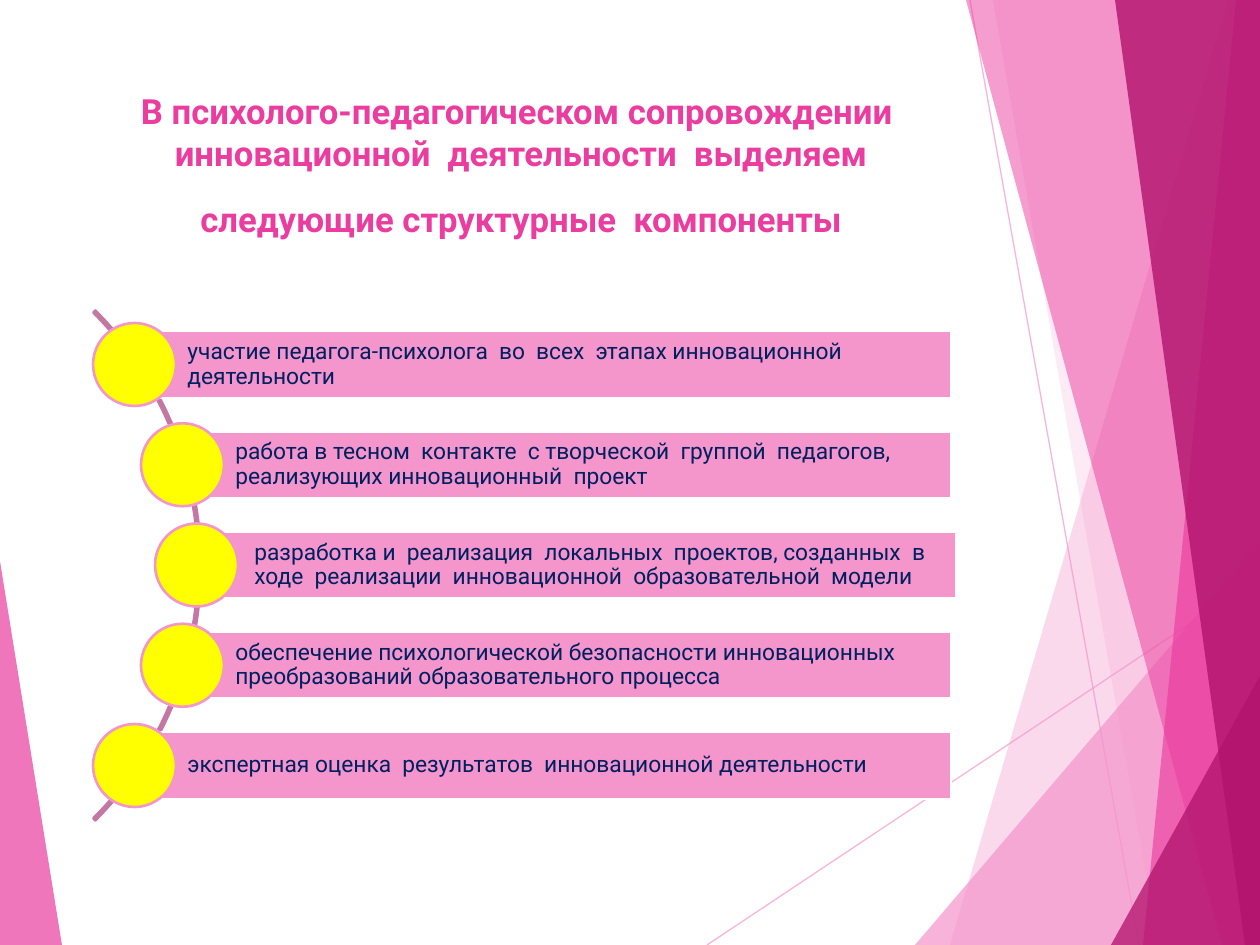
"""Build the slide on the components of psychological and pedagogical support."""
from lxml import etree
from pptx import Presentation, util as u
from pptx.dml.color import RGBColor
from pptx.enum import shapes, text
from pptx.oxml.ns import qn

SCALE = 914400 / 126
WIDTH, HEIGHT = 1260, 945
PINK, HOT = RGBColor(0xF4, 0x96, 0xCB), RGBColor(0xEB, 0x3D, 0x9F)
CRIMSON, MAUVE = RGBColor(0xB2, 0x13, 0x6D), RGBColor(0xC3, 0x78, 0xA3)
NAVY, YELLOW = RGBColor(0x00, 0x20, 0x60), RGBColor(0xFF, 0xFF, 0x00)
WHITE = RGBColor(0xFF, 0xFF, 0xFF)

TITLE = ["В психолого-педагогическом сопровождении  инновационной  деятельности  выделяем",
         "следующие структурные  компоненты"]
COMPONENTS = [
    ("участие педагога-психолога  во  всех  этапах инновационной  деятельности", 93, 0),
    ("работа в тесном  контакте  с творческой  группой  педагогов,  реализующих "
     "инновационный  проект", 141, 0),
    ("разработка и  реализация  локальных  проектов, созданных  в  ходе  реализации  "
     "инновационной  образовательной  модели", 155, 5),
    ("обеспечение психологической безопасности инновационных преобразований "
     "образовательного процесса", 141, 0),
    ("экспертная оценка  результатов  инновационной деятельности", 93, 0),
]
RAYS = [((707, 945), (1260, 577)), ((970, 0), (1139, 945))]
RIGHT_TOP, RIGHT_BOTTOM = (WIDTH, 0), (WIDTH, HEIGHT)
FACETS = [
    ([(1228, 0), (950, 945), RIGHT_BOTTOM, RIGHT_TOP], PINK, 36),
    ([(993, 0), (1158, 945), RIGHT_BOTTOM, RIGHT_TOP], PINK, 20),
    ([(915, 945), (1260, 541), RIGHT_BOTTOM], PINK, 72),
    ([(966, 0), (1222, 945), RIGHT_BOTTOM, RIGHT_TOP], HOT, 50),
    ([(1236, 0), (1143, 945), RIGHT_BOTTOM, RIGHT_TOP], HOT, 66),
    ([(1115, 0), (1245, 945), RIGHT_BOTTOM, RIGHT_TOP], CRIMSON, 80),
    ([(1111, 945), (1260, 676), RIGHT_BOTTOM], CRIMSON, 76),
    ([(0, 561), (62, 945), (0, 945)], HOT, 70),
]
FIRST_TOP, LAST_TOP, BAR_HEIGHT, BAR_RIGHT, CIRCLE = 331, 732, 67, 951, 83
ARC_BOX, ARC_ADJUSTMENTS = (-520, 205, 721, 721), (189, 27, 0.004)
TITLE_FONT = {"name": "Roboto", "size": u.Pt(19.8), "bold": True}
BAR_FONT = {"name": "Roboto", "size": u.Pt(13), "bold": False}


def px(value):
    return u.Emu(round(value * SCALE))


def assign(target, values):
    for name, value in values.items():
        setattr(target, name, value)


def set_opacity(element, percent):
    color = next(element.iter(qn("a:srgbClr")))
    etree.SubElement(color, qn("a:alpha"), val=str(percent * 1000))


def add_ray(page, start, end):
    ray = page.shapes.add_connector(shapes.MSO_CONNECTOR.STRAIGHT, *map(px, start + end))
    ray.line.color.rgb, ray.line.width = PINK, u.Pt(0.75)
    set_opacity(ray.line._ln, 70)
    etree.SubElement(ray._element.spPr, qn("a:effectLst"))


def add_facet(page, points, color, opacity):
    builder = page.shapes.build_freeform(*points[0], scale=SCALE)
    builder.add_line_segments(points[1:], close=True)
    facet = builder.convert_to_shape()
    facet.shadow.inherit = False
    facet.fill.solid()
    facet.fill.fore_color.rgb = color
    set_opacity(facet._element.spPr, opacity)
    facet.line.fill.background()


def add_preset(page, kind, box, fill, line):
    shape = page.shapes.add_shape(kind, *map(px, box))
    shape.shadow.inherit = False
    if fill is None:
        shape.fill.background()
    else:
        shape.fill.solid()
        shape.fill.fore_color.rgb = fill
    shape.line.color.rgb, shape.line.width = line, u.Pt(1.5)
    return shape


def write(frame, lines, font, color, align, spacing):
    for index, line in enumerate(lines):
        para = frame.paragraphs[0] if index == 0 else frame.add_paragraph()
        assign(para, {"alignment": align, "line_spacing": spacing})
        if index:
            para.space_before = u.Pt(14)
        span = para.add_run()
        span.text = line
        assign(span.font, font)
        span.font.color.rgb = color


def add_title(page):
    title = page.shapes.title
    assign(title, {"left": px(84), "top": px(84), "width": px(874), "height": px(182)})
    assign(title.text_frame, {"word_wrap": True, "auto_size": text.MSO_AUTO_SIZE.NONE,
                              "vertical_anchor": text.MSO_ANCHOR.TOP})
    write(title.text_frame, TITLE, TITLE_FONT, HOT, text.PP_ALIGN.CENTER, 1.0)


def add_components(page):
    arc = add_preset(page, shapes.MSO_SHAPE.BLOCK_ARC, ARC_BOX, None, MAUVE)
    for index, value in enumerate(ARC_ADJUSTMENTS):
        arc.adjustments[index] = value
    pitch = (LAST_TOP - FIRST_TOP) / (len(COMPONENTS) - 1)
    for index, (label, circle_left, shift) in enumerate(COMPONENTS):
        top = FIRST_TOP + index * pitch
        left = circle_left + CIRCLE / 2 + shift
        bar = add_preset(page, shapes.MSO_SHAPE.RECTANGLE,
                         (left, top, BAR_RIGHT + shift - left, BAR_HEIGHT), PINK, WHITE)
        assign(bar.text_frame, {"word_wrap": True, "vertical_anchor": text.MSO_ANCHOR.MIDDLE,
                                "margin_left": px(53), "margin_right": px(5),
                                "margin_top": px(5), "margin_bottom": px(5)})
        write(bar.text_frame, [label], BAR_FONT, NAVY, text.PP_ALIGN.LEFT, 0.9)
        circle_top = top + (BAR_HEIGHT - CIRCLE) / 2
        add_preset(page, shapes.MSO_SHAPE.OVAL,
                   (circle_left, circle_top, CIRCLE, CIRCLE), YELLOW, PINK)


def main():
    deck = Presentation()
    assign(deck, {"slide_width": px(WIDTH), "slide_height": px(HEIGHT)})
    page = deck.slides.add_slide(deck.slide_layouts[5])
    for ray in RAYS:
        add_ray(page, *ray)
    for facet in FACETS:
        add_facet(page, *facet)
    add_title(page)
    add_components(page)
    deck.save("out.pptx")


if __name__ == "__main__":
    main()
